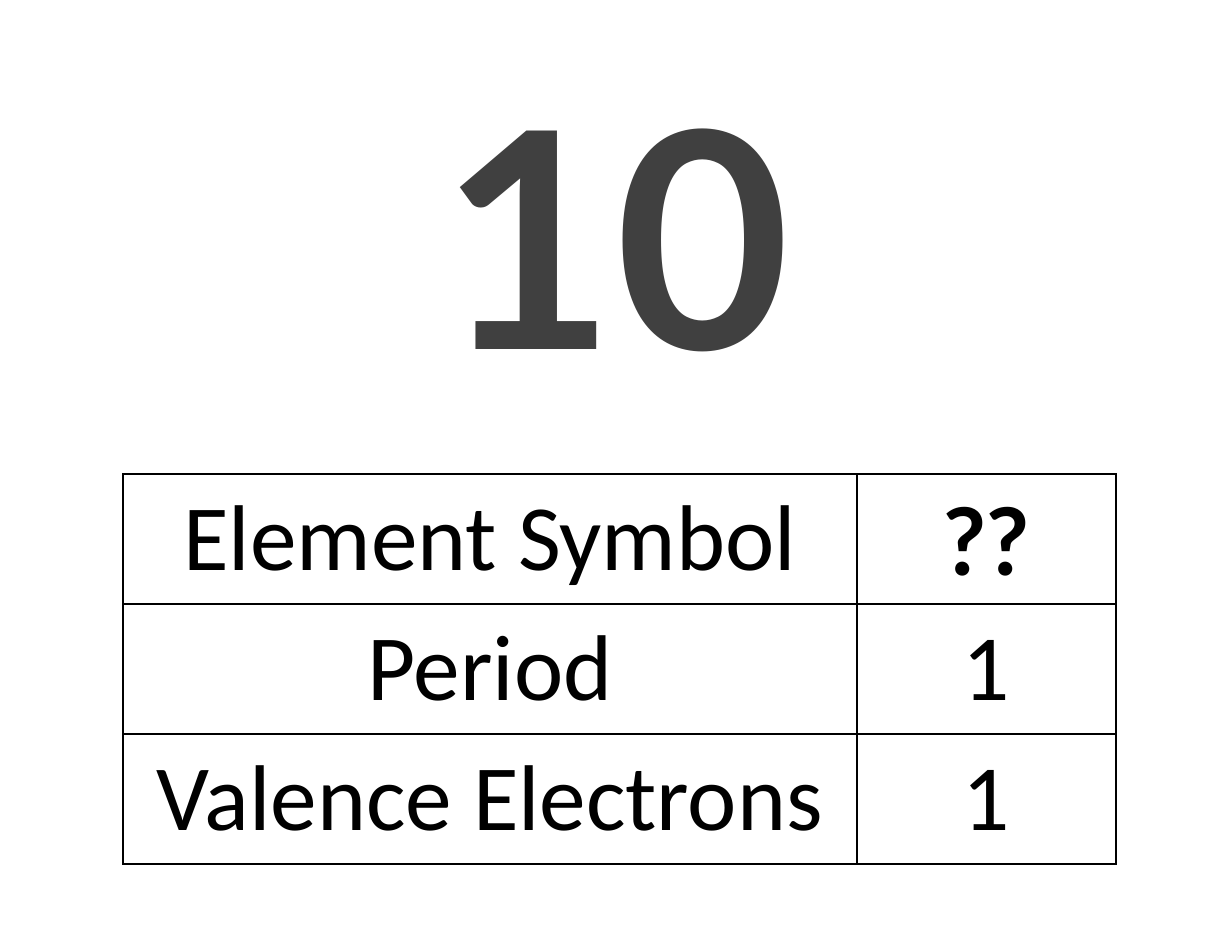
from lxml.etree import SubElement
from pptx import Presentation
from pptx.dml.color import RGBColor
from pptx.enum.text import MSO_ANCHOR, MSO_AUTO_SIZE, PP_ALIGN
from pptx.oxml.ns import qn
from pptx.util import Emu, Pt

EMU_PER_PX = 914400 / 112
COLORS = {"number": "404040", "text": "000000", "border": "000000"}
ROWS = [("Element Symbol", "??"), ("Period", "1"), ("Valence Electrons", "1")]
COLUMN_WIDTHS = [734, 259]
ROW_HEIGHT = 130


def px(length):
    return Emu(round(length * EMU_PER_PX))


def add_span(para, text, font, size, color, bold=False):
    para.alignment = PP_ALIGN.CENTER
    span = para.add_run()
    span.text = text
    span.font.name = font
    span.font.size = Pt(size)
    span.font.bold = bold
    span.font.color.rgb = RGBColor.from_string(COLORS[color])


def add_number(page, text):
    box = page.shapes.title
    box.left, box.top, box.width, box.height = map(px, (0, 85, 1232, 334))
    frame = box.text_frame
    frame.word_wrap = True
    frame.auto_size = MSO_AUTO_SIZE.NONE
    frame.vertical_anchor = MSO_ANCHOR.MIDDLE
    para = frame.paragraphs[0]
    para.line_spacing = 0.9
    add_span(para, text, "Lato", 194, "number", bold=True)


def add_borders(cell):
    properties = cell._tc.get_or_add_tcPr()
    for side in ("a:lnL", "a:lnR", "a:lnT", "a:lnB"):
        line = SubElement(properties, qn(side), w=str(Pt(1)))
        fill = SubElement(line, qn("a:solidFill"))
        SubElement(fill, qn("a:srgbClr"), val=COLORS["border"])


def add_clue_table(page):
    frame = page.shapes.add_table(
        len(ROWS), len(COLUMN_WIDTHS), px(123), px(474),
        px(sum(COLUMN_WIDTHS)), px(ROW_HEIGHT * len(ROWS)))
    table = frame.table
    table.first_row = table.horz_banding = False
    for column, width in zip(table.columns, COLUMN_WIDTHS):
        column.width = px(width)
    for row, texts in zip(table.rows, ROWS):
        row.height = px(ROW_HEIGHT)
        for cell, text in zip(row.cells, texts):
            cell.vertical_anchor = MSO_ANCHOR.MIDDLE
            # The unknown symbol stands out in bold
            unknown = text == "??"
            font = "Lato" if unknown else "Calibri"
            add_span(cell.text_frame.paragraphs[0], text, font, 60, "text", unknown)
            # Borders come before the fill in the cell properties
            add_borders(cell)
            cell.fill.background()


def main():
    deck = Presentation()
    deck.slide_width, deck.slide_height = px(1232), px(952)
    page = deck.slides.add_slide(deck.slide_layouts[5])
    # Card number
    add_number(page, "10")
    # Clues about the element
    add_clue_table(page)
    deck.save("out.pptx")


if __name__ == "__main__":
    main()
